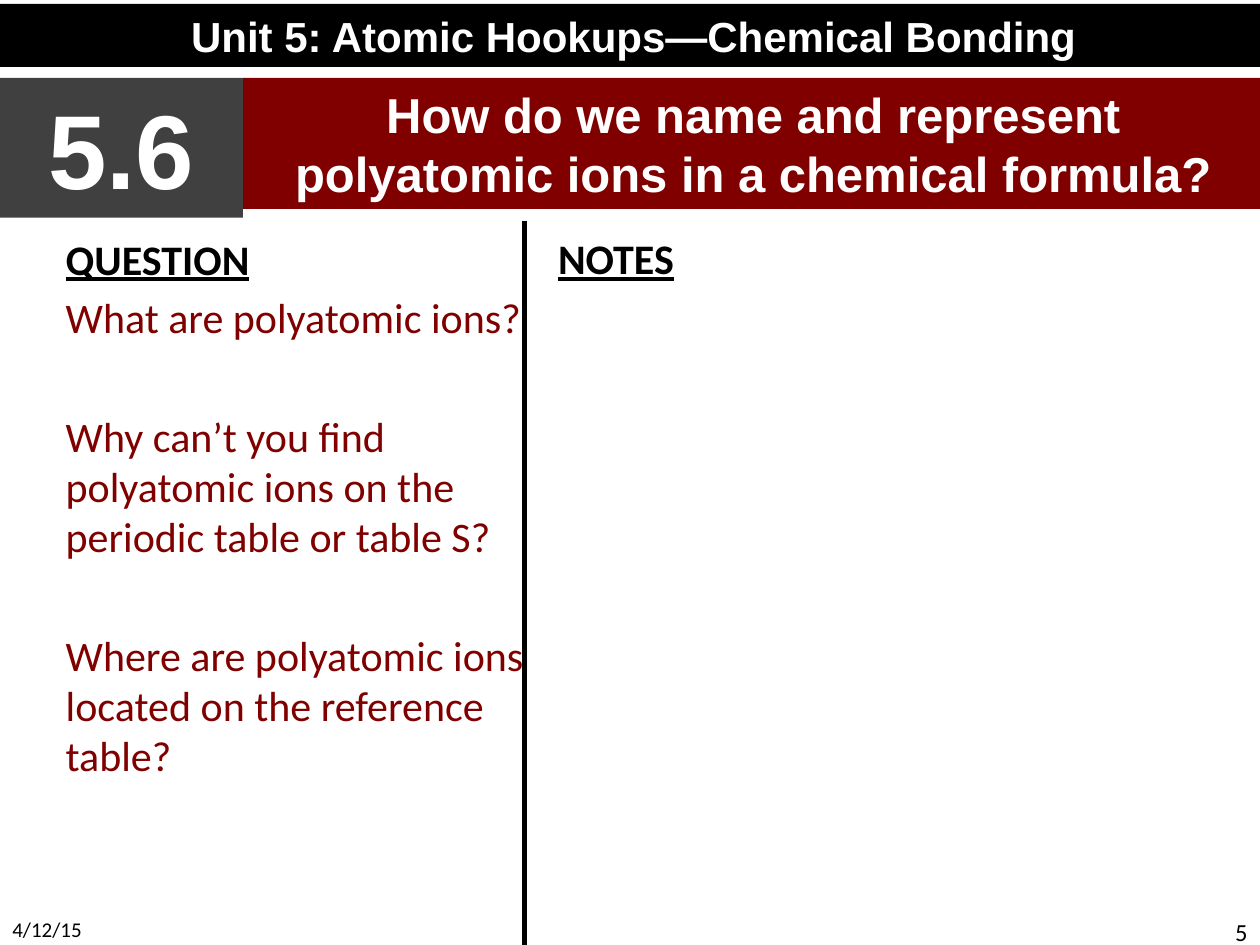
from dataclasses import dataclass

from lxml import etree
from pptx import Presentation
from pptx import util as u
from pptx.dml.color import RGBColor
from pptx.enum import shapes, text
from pptx.oxml.ns import qn

BLACK, WHITE, GRAY, MAROON = "000000", "FFFFFF", "404040", "800000"
LEFT, CENTER, RIGHT = text.PP_ALIGN.LEFT, text.PP_ALIGN.CENTER, text.PP_ALIGN.RIGHT
TOP, MIDDLE = text.MSO_ANCHOR.TOP, text.MSO_ANCHOR.MIDDLE


@dataclass
class Box:
    """Position and size in centimetres."""
    x: float
    y: float
    w: float
    h: float


@dataclass
class Style:
    size: float
    color: str = BLACK
    font: str = "Calibri"
    bold: bool = False
    underline: bool = False
    align: text.PP_ALIGN = LEFT


@dataclass
class Label:
    words: str
    box: Box
    style: Style


@dataclass
class Bar:
    words: str
    box: Box
    fill: str
    size: float
    is_title: bool = False


HEADING = Style(24, bold=True, underline=True)
QUESTION = Style(24, MAROON)

BARS = [
    Bar("Unit 5: Atomic Hookups—Chemical Bonding", Box(0, 0.08, 25.55, 1.27), BLACK, 24),
    Bar("5.6", Box(0, 1.57, 4.9, 2.82), GRAY, 60),
    Bar("How do we name and represent polyatomic ions in a chemical formula?",
        Box(4.9, 1.57, 20.57, 2.64), MAROON, 28, is_title=True),
]
LABELS = [
    Label("4/12/15", Box(0, 18.36, 5.92, 0.69), Style(12)),
    Label("5", Box(19.48, 18.36, 5.92, 0.69), Style(14, align=RIGHT)),
    Label("NOTES", Box(11, 4.57, 14.4, 12.57), HEADING),
]
QUESTIONS = [
    "What are polyatomic ions?",
    "Why can’t you find polyatomic ions on the periodic table or table S?",
    "Where are polyatomic ions located on the reference table?",
]


def rgb(value: str) -> RGBColor:
    return RGBColor.from_string(value)


def place(sp, box: Box) -> None:
    sp.left, sp.top = u.Cm(box.x), u.Cm(box.y)
    sp.width, sp.height = u.Cm(box.w), u.Cm(box.h)


def prepare(sp, anchor):
    tf = sp.text_frame
    tf.word_wrap = True
    tf.auto_size = text.MSO_AUTO_SIZE.NONE
    tf.vertical_anchor = anchor
    return tf


def write(p, words: str, style: Style, before: float = 0) -> None:
    p.alignment = style.align
    p.space_before = u.Pt(before)
    r = p.add_run()
    r.text = words
    r.font.name, r.font.size = style.font, u.Pt(style.size)
    r.font.bold, r.font.underline = style.bold, style.underline
    r.font.color.rgb = rgb(style.color)


def draw_bar(slide, bar: Bar) -> None:
    if bar.is_title:
        sp = slide.shapes.title
        place(sp, bar.box)
    else:
        b = bar.box
        sp = slide.shapes.add_shape(shapes.MSO_SHAPE.RECTANGLE,
                                    u.Cm(b.x), u.Cm(b.y), u.Cm(b.w), u.Cm(b.h))
        sp.shadow.inherit = False
    sp.fill.solid()
    sp.fill.fore_color.rgb = rgb(bar.fill)
    sp.line.fill.background()
    tf = prepare(sp, MIDDLE)
    write(tf.paragraphs[0], bar.words, Style(bar.size, WHITE, "Arial", True, align=CENTER))


def draw_label(slide, label: Label) -> None:
    b = label.box
    sp = slide.shapes.add_textbox(u.Cm(b.x), u.Cm(b.y), u.Cm(b.w), u.Cm(b.h))
    write(prepare(sp, TOP).paragraphs[0], label.words, label.style)


def draw_questions(sp, box: Box) -> None:
    place(sp, box)
    tf = prepare(sp, TOP)
    for i, words in enumerate(["QUESTION", *QUESTIONS]):
        p = tf.paragraphs[0] if i == 0 else tf.add_paragraph()
        pPr = p._p.get_or_add_pPr()
        pPr.set("marL", "0")
        pPr.set("indent", "0")
        etree.SubElement(pPr, qn("a:buNone"))
        # Room to write an answer is left between questions
        before = (0, 4.8)[i] if i < 2 else 38.8
        write(p, words, HEADING if i == 0 else QUESTION, before)


def draw_divider(slide, x: float, top: float, bottom: float) -> None:
    line = slide.shapes.add_connector(shapes.MSO_CONNECTOR.STRAIGHT,
                                      u.Cm(x), u.Cm(top), u.Cm(x), u.Cm(bottom))
    line.line.color.rgb = rgb(BLACK)
    line.line.width = u.Pt(3)
    etree.SubElement(line._element.spPr, qn("a:effectLst"))


def main() -> None:
    prs = Presentation()
    prs.slide_width, prs.slide_height = u.Cm(25.4), u.Cm(19.05)
    slide = prs.slides.add_slide(prs.slide_layouts[1])

    # Question column
    draw_questions(slide.placeholders[1], Box(1.07, 4.57, 9.96, 12.57))
    # Header bars
    for bar in BARS:
        draw_bar(slide, bar)
    # Column divider
    draw_divider(slide, 10.58, 4.45, 19.05)
    # Notes heading, date and page number
    for label in LABELS:
        draw_label(slide, label)

    prs.save("out.pptx")


if __name__ == "__main__":
    main()
